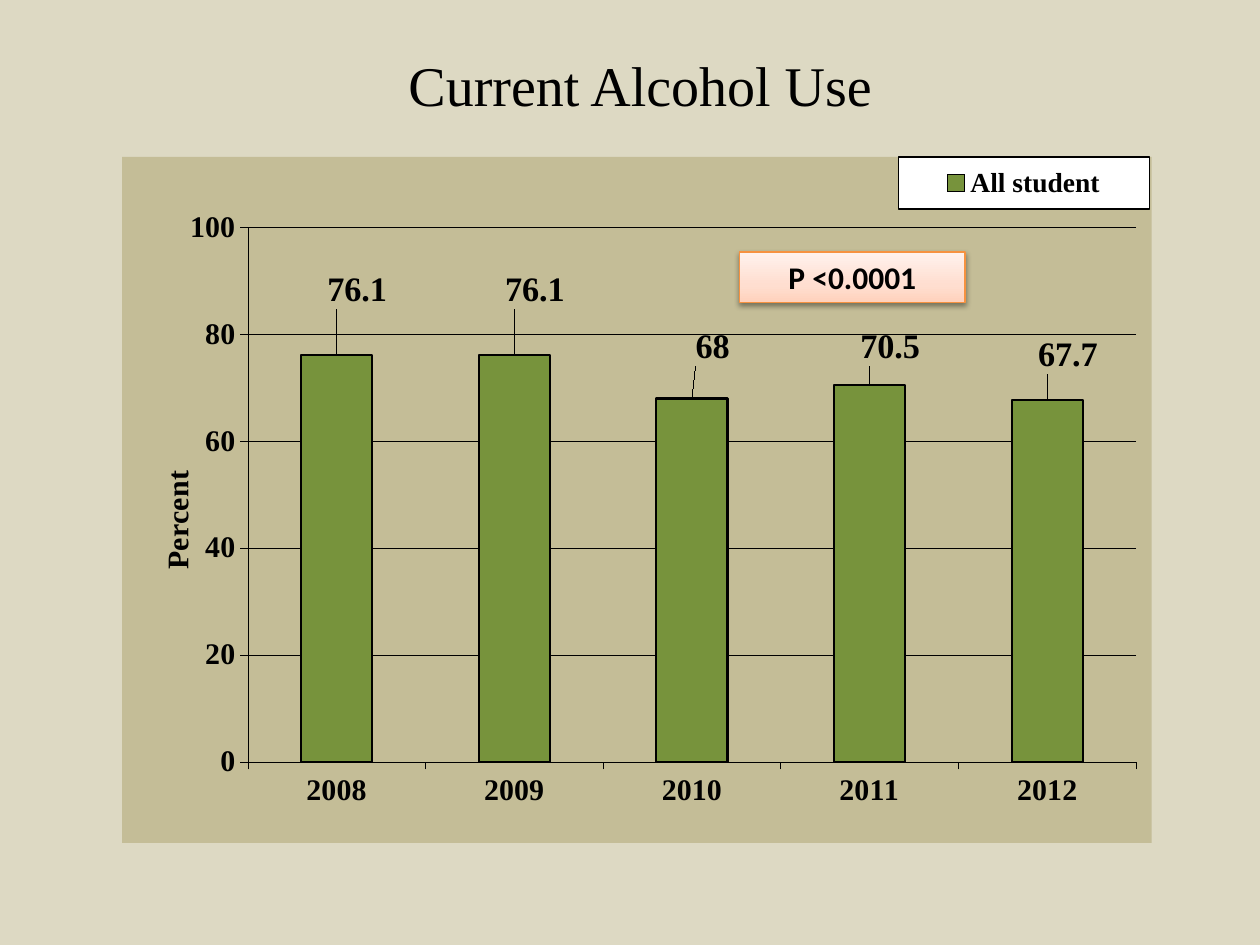
from lxml.etree import fromstring
from pptx import Presentation
from pptx.chart.data import CategoryChartData
from pptx.dml.color import RGBColor
from pptx.enum.chart import XL_CHART_TYPE, XL_LABEL_POSITION, XL_LEGEND_POSITION, XL_TICK_LABEL_POSITION, XL_TICK_MARK
from pptx.enum.shapes import MSO_SHAPE
from pptx.enum.text import MSO_ANCHOR, MSO_AUTO_SIZE, PP_ALIGN
from pptx.oxml.ns import nsdecls, qn
from pptx.oxml import parse_xml
from pptx.util import Pt

COLORS = {
    "background": "DDD9C3", "panel": "C4BD97", "bar": "77933C",
    "black": "000000", "white": "FFFFFF", "border": "F69240",
    "peach": "FFD2BD", "blush": "FFDED0", "cream": "FFF2ED",
}
SERIF = "Times New Roman"
YEARS = ["2008", "2009", "2010", "2011", "2012"]
PERCENTS = [76.1, 76.1, 68, 70.5, 67.7]
LABEL_SHIFTS = [(0.02, -0.06), (0.02, -0.06), (0.02, -0.04), (0.02, -0.02), (0.02, -0.03)]


def rgb(name):
    return RGBColor.from_string(COLORS[name])


def set_values(obj, values):
    for name, value in values.items():
        setattr(obj, name, value)


def set_font(font, size, name=SERIF, bold=True):
    set_values(font, {"size": Pt(size), "name": name, "bold": bold})
    font.color.rgb = rgb("black")


def set_line(line, width, color="black"):
    line.color.rgb = rgb(color)
    line.width = Pt(width)


def set_layout(parent, index, values):
    for old in parent.findall(qn("c:layout")):
        parent.remove(old)
    items = "".join(f'<c:{k} val="{v}"/>' for k, v in values.items())
    parent.insert(index, parse_xml(
        f'<c:layout {nsdecls("c")}><c:manualLayout>{items}</c:manualLayout></c:layout>'))


def area_format(color, line=None):
    fill = '<a:solidFill><a:srgbClr val="{}"/></a:solidFill>'
    edge = fill.format(COLORS[line]) if line else "<a:noFill/>"
    return parse_xml(f'<c:spPr {nsdecls("c", "a")}>{fill.format(COLORS[color])}'
                     f'<a:ln w="{Pt(0.75)}">{edge}</a:ln></c:spPr>')


def add_title(s, text):
    sp = s.shapes.title
    set_values(sp, {"left": Pt(42), "top": Pt(12), "width": Pt(648), "height": Pt(108)})
    tf = sp.text_frame
    set_values(tf, {"vertical_anchor": MSO_ANCHOR.MIDDLE, "margin_bottom": Pt(39), "word_wrap": True})
    p = tf.paragraphs[0]
    p.alignment = PP_ALIGN.CENTER
    r = p.add_run()
    r.text = text
    set_font(r.font, 32, bold=False)


def format_axes(chart):
    for axis in (chart.category_axis, chart.value_axis):
        set_values(axis, {"major_tick_mark": XL_TICK_MARK.OUTSIDE, "minor_tick_mark": XL_TICK_MARK.NONE})
        set_font(axis.tick_labels.font, 17.1)
        set_line(axis.format.line, 0.31)
    chart.category_axis.tick_label_position = XL_TICK_LABEL_POSITION.LOW
    axis = chart.value_axis
    set_values(axis, {"minimum_scale": 0, "maximum_scale": 100, "major_unit": 20,
                      "has_major_gridlines": True})
    set_line(axis.major_gridlines.format.line, 0.31)
    p = axis.axis_title.text_frame.paragraphs[0]
    r = p.add_run()
    r.text = "Percent"
    set_font(r.font, 17.1)
    title = axis.axis_title._element
    set_layout(title, 1, {"xMode": "edge", "yMode": "edge", "x": 0.03, "y": 0.45})


def format_bars(plot):
    set_values(plot, {"gap_width": 150, "vary_by_categories": False, "has_data_labels": True})
    plot.data_labels.show_value = True
    set_font(plot.data_labels.font, 19.6)
    series = plot.series[0]
    series.format.fill.solid()
    series.format.fill.fore_color.rgb = rgb("bar")
    set_line(series.format.line, 1.22)
    for i, (x, y) in enumerate(LABEL_SHIFTS):
        label = series.points[i].data_label
        set_font(label.font, 19.6)
        label.position = XL_LABEL_POSITION.OUTSIDE_END
        dlbl = series._element.findall(".//" + qn("c:dLbl"))[i]
        set_layout(dlbl, 1, {"x": x, "y": y})


def format_legend(chart):
    chart.has_legend = True
    legend = chart.legend
    set_values(legend, {"position": XL_LEGEND_POSITION.TOP, "include_in_layout": False})
    set_font(legend.font, 15.7)
    el = legend._element
    set_layout(el, 1, {"xMode": "edge", "yMode": "edge", "x": 0.754, "y": 0, "w": 0.244, "h": 0.076})
    el.find(qn("c:overlay")).addnext(area_format("white", "black"))


def add_bar_chart(s):
    data = CategoryChartData()
    data.categories = YEARS
    data.add_series("All student", PERCENTS)
    chart = s.shapes.add_chart(XL_CHART_TYPE.COLUMN_CLUSTERED, Pt(69.84), Pt(89.28),
                               Pt(588.24), Pt(392.4), data).chart
    chart.has_title = False
    set_font(chart.font, 22.1)
    format_axes(chart)
    format_bars(chart.plots[0])
    format_legend(chart)
    space = chart._chartSpace
    space.find(qn("c:chart")).addnext(area_format("panel"))
    area = space.find(".//" + qn("c:plotArea"))
    set_layout(area, 0, {"layoutTarget": "inner", "xMode": "edge", "yMode": "edge",
                         "x": 0.122, "y": 0.103, "w": 0.863, "h": 0.779})
    area.append(area_format("panel"))


def add_callout(s, text):
    sp = s.shapes.add_shape(MSO_SHAPE.RECTANGLE, Pt(422.64), Pt(144), Pt(128.88), Pt(28.8))
    set_line(sp.line, 0.75, "border")
    stops = "".join(f'<a:gs pos="{pos * 1000}"><a:srgbClr val="{COLORS[c]}"/></a:gs>'
                    for pos, c in ((0, "peach"), (35, "blush"), (100, "cream")))
    sp_pr = sp._element.spPr
    sp_pr.find(qn("a:prstGeom")).addnext(fromstring(
        f'<a:gradFill {nsdecls("a")} rotWithShape="1"><a:gsLst>{stops}</a:gsLst>'
        '<a:lin ang="16200000" scaled="1"/></a:gradFill>'))
    sp_pr.append(fromstring(
        f'<a:effectLst {nsdecls("a")}><a:outerShdw blurRad="{Pt(3.1)}" dist="{Pt(1.6)}" '
        f'dir="5400000" rotWithShape="0"><a:srgbClr val="{COLORS["black"]}">'
        '<a:alpha val="38000"/></a:srgbClr></a:outerShdw></a:effectLst>'))
    tf = sp.text_frame
    set_values(tf, {"word_wrap": True, "auto_size": MSO_AUTO_SIZE.SHAPE_TO_FIT_TEXT})
    p = tf.paragraphs[0]
    p.alignment = PP_ALIGN.CENTER
    r = p.add_run()
    r.text = text
    set_font(r.font, 18, "Calibri")


def main():
    prs = Presentation()
    set_values(prs, {"slide_width": Pt(720), "slide_height": Pt(540)})
    s = prs.slides.add_slide(prs.slide_layouts[5])
    s.background.fill.solid()
    s.background.fill.fore_color.rgb = rgb("background")
    add_title(s, "Current Alcohol Use")
    add_bar_chart(s)
    add_callout(s, "P <0.0001")
    prs.save("out.pptx")


if __name__ == "__main__":
    main()
